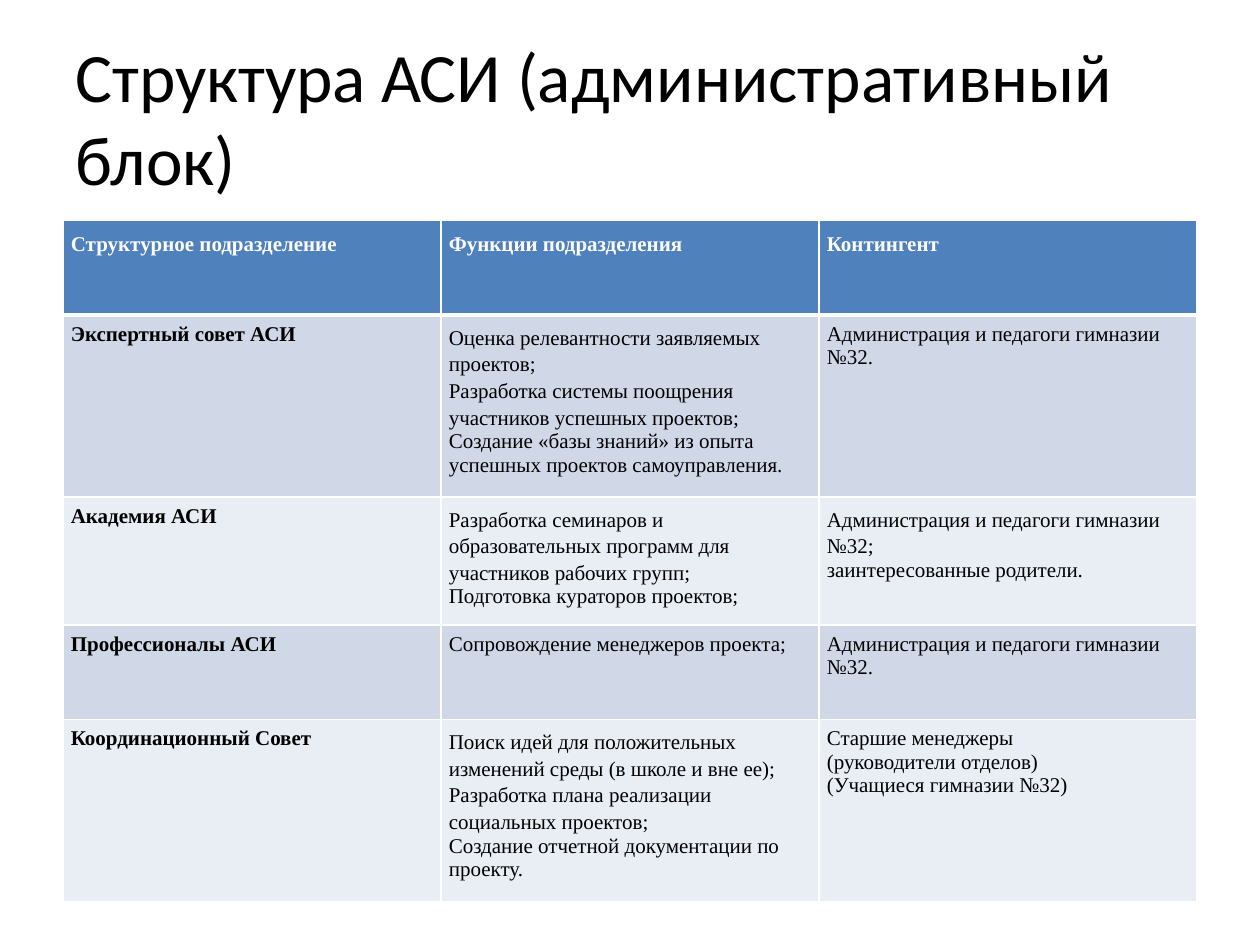
from dataclasses import dataclass

import lxml.etree
import pptx
import pptx.dml.color
import pptx.enum.text
import pptx.oxml.ns
import pptx.util

Pt = pptx.util.Pt

WHITE = "FFFFFF"
HEADER_FILL = "4F81BD"
BAND_FILLS = ("D0D8E8", "E9EDF4")
TITLE = "Структура АСИ (административный блок)"
TITLE_FONT = {"name": "Calibri", "size": Pt(39.6), "bold": False}
TABLE_FONT = {"name": "Times New Roman", "size": Pt(12)}
HEADER_SPACING = {"line_spacing": 1.2, "space_before": Pt(10)}
LOOSE_SPACING = {"line_spacing": 1.15}
MARGINS = {
    f"margin_{side}": Pt(4.5) for side in ("left", "right", "top", "bottom")
}
HEADERS = ("Структурное подразделение", "Функции подразделения", "Контингент")


@dataclass
class Entry:
    lines: tuple[str, ...]
    loose_count: int = 0


@dataclass
class Department:
    name: str
    functions: Entry
    members: Entry


STAFF = Entry(("Администрация и педагоги гимназии №32.",))
DEPARTMENTS = (
    Department(
        "Экспертный совет АСИ",
        Entry((
            "Оценка релевантности заявляемых проектов;",
            "Разработка системы поощрения участников успешных проектов;",
            "Создание «базы знаний» из опыта успешных проектов самоуправления.",
        ), 2),
        STAFF,
    ),
    Department(
        "Академия АСИ",
        Entry((
            "Разработка семинаров и образовательных программ для участников рабочих групп;",
            "Подготовка кураторов проектов;",
        ), 1),
        Entry((
            "Администрация и педагоги гимназии №32;",
            "заинтересованные родители.",
        ), 1),
    ),
    Department(
        "Профессионалы АСИ",
        Entry(("Сопровождение менеджеров проекта;",)),
        STAFF,
    ),
    Department(
        "Координационный Совет",
        Entry((
            "Поиск идей для положительных изменений среды (в школе и вне ее);",
            "Разработка плана реализации социальных проектов;",
            "Создание отчетной документации по проекту.",
        ), 2),
        Entry((
            "Старшие менеджеры",
            "(руководители отделов)",
            "(Учащиеся гимназии №32)",
        )),
    ),
)


def apply(target, values: dict) -> None:
    for name, value in values.items():
        setattr(target, name, value)


def paint(color_format, color: str) -> None:
    color_format.rgb = pptx.dml.color.RGBColor.from_string(color)


def write(para, text: str, font: dict, color: str, spacing: dict) -> None:
    apply(para, spacing)
    span = para.add_run()
    span.text = text
    apply(span.font, font)
    paint(span.font.color, color)


def add_border(cell, side: str, width: float) -> None:
    qn = pptx.oxml.ns.qn
    properties = cell._tc.get_or_add_tcPr()
    line = lxml.etree.SubElement(properties, qn(f"a:ln{side}"), w=str(Pt(width)))
    fill = lxml.etree.SubElement(line, qn("a:solidFill"))
    lxml.etree.SubElement(fill, qn("a:srgbClr"), val=WHITE)


def fill_cell(cell, entry: Entry, fill: str, color: str, bold: bool,
              spacing: dict, top: float, bottom: float) -> None:
    apply(cell, MARGINS)
    for side, width in {"L": 1, "R": 1, "T": top, "B": bottom}.items():
        add_border(cell, side, width)
    cell.fill.solid()
    paint(cell.fill.fore_color, fill)
    frame = cell.text_frame
    for index, text in enumerate(entry.lines):
        para = frame.add_paragraph() if index else frame.paragraphs[0]
        line_format = LOOSE_SPACING if index < entry.loose_count else spacing
        write(para, text, TABLE_FONT | {"bold": bold}, color, line_format)


def add_title(page) -> None:
    box = page.shapes.add_textbox(Pt(36), Pt(21.6), Pt(648), Pt(90))
    frame = box.text_frame
    apply(frame, {
        "word_wrap": True,
        "vertical_anchor": pptx.enum.text.MSO_ANCHOR.MIDDLE,
    })
    write(frame.paragraphs[0], TITLE, TITLE_FONT, "000000", {})


def add_departments(page) -> None:
    row_count = len(DEPARTMENTS) + 1
    table = page.shapes.add_table(
        row_count, len(HEADERS), Pt(36), Pt(126), Pt(648), Pt(54 * row_count)
    ).table
    for column, heading in enumerate(HEADERS):
        fill_cell(table.cell(0, column), Entry((heading,)), HEADER_FILL,
                  "FEFEFE", True, HEADER_SPACING, 1, 3)
    for row, department in enumerate(DEPARTMENTS, 1):
        entries = (Entry((department.name,)), department.functions, department.members)
        for column, entry in enumerate(entries):
            fill_cell(table.cell(row, column), entry, BAND_FILLS[(row - 1) % 2],
                      "000000", column == 0, {}, 3 if row == 1 else 1, 1)


def main() -> None:
    deck = pptx.Presentation()
    apply(deck, {"slide_width": Pt(720), "slide_height": Pt(540)})
    page = deck.slides.add_slide(deck.slide_layouts[6])
    add_title(page)
    add_departments(page)
    deck.save("out.pptx")


if __name__ == "__main__":
    main()
